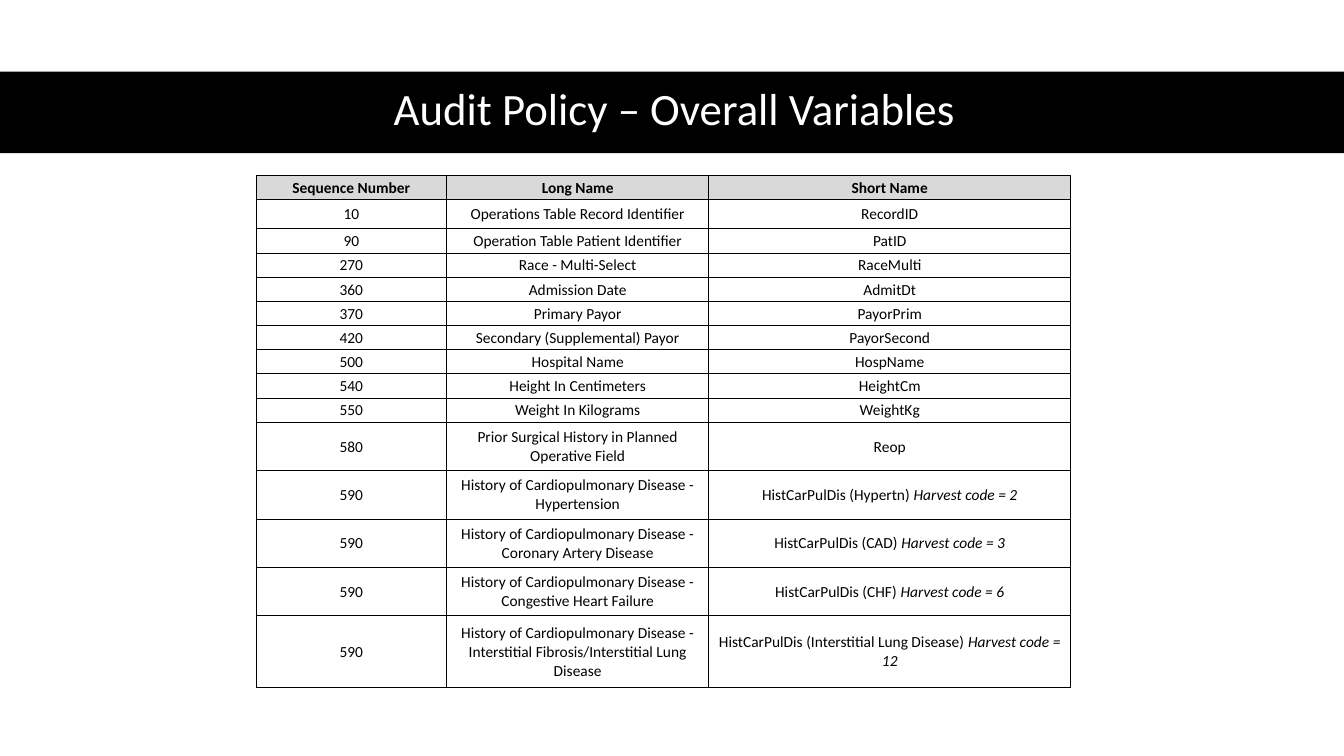
from dataclasses import dataclass

from lxml.etree import SubElement
from pptx import Presentation
from pptx.dml.color import RGBColor
from pptx.enum.shapes import MSO_SHAPE
from pptx.enum.text import MSO_ANCHOR, PP_ALIGN
from pptx.oxml.ns import qn
from pptx.util import Inches, Pt


@dataclass(frozen=True)
class Theme:
    font: str = "Calibri"
    black: str = "000000"
    white: str = "FFFFFF"
    header: str = "D9D9D9"
    title_size: int = 32
    table_size: int = 11
    border: float = 0.5


@dataclass(frozen=True)
class Variable:
    number: str
    long_name: str
    short_name: str
    harvest_code: str = ""
    height: float = 0.24


THEME = Theme()
HEADER = Variable("Sequence Number", "Long Name", "Short Name")
DISEASE = "History of Cardiopulmonary Disease - "
VARIABLES = [
    Variable("10", "Operations Table Record Identifier", "RecordID", height=0.29),
    Variable("90", "Operation Table Patient Identifier", "PatID"),
    Variable("270", "Race - Multi-Select", "RaceMulti"),
    Variable("360", "Admission Date", "AdmitDt"),
    Variable("370", "Primary Payor", "PayorPrim"),
    Variable("420", "Secondary (Supplemental) Payor", "PayorSecond"),
    Variable("500", "Hospital Name", "HospName"),
    Variable("540", "Height In Centimeters", "HeightCm"),
    Variable("550", "Weight In Kilograms", "WeightKg"),
    Variable("580", "Prior Surgical History in Planned Operative Field", "Reop", height=0.48),
    Variable("590", DISEASE + "Hypertension", "HistCarPulDis (Hypertn) ", "2", 0.48),
    Variable("590", DISEASE + "Coronary Artery Disease", "HistCarPulDis (CAD) ", "3", 0.48),
    Variable("590", DISEASE + "Congestive Heart Failure", "HistCarPulDis (CHF) ", "6", 0.48),
    Variable("590", DISEASE + "Interstitial Fibrosis/Interstitial Lung Disease",
             "HistCarPulDis (Interstitial Lung Disease) ", "12", 0.71),
]
COLUMN_WIDTHS = (1.89, 2.6, 3.59)


def add_text(p, text: str, *, size: int, color: str, bold: bool = False,
             italic: bool = False) -> None:
    p.alignment = PP_ALIGN.CENTER
    r = p.add_run()
    r.text = text
    r.font.name = THEME.font
    r.font.size = Pt(size)
    r.font.bold = bold
    r.font.italic = italic
    r.font.color.rgb = RGBColor.from_string(color)


def add_title(s, text: str) -> None:
    title = s.shapes.title
    title.left, title.top = Inches(0.61), Inches(0.7)
    title.width, title.height = Inches(12.26), Inches(0.81)
    tf = title.text_frame
    tf.word_wrap = True
    tf.vertical_anchor = MSO_ANCHOR.MIDDLE
    p = tf.paragraphs[0]
    p.line_spacing = 0.9
    add_text(p, text, size=THEME.title_size, color=THEME.white)

    # Black band behind the title
    band = s.shapes.add_shape(MSO_SHAPE.RECTANGLE, 0, Inches(0.71), Inches(13.33), Inches(0.81))
    band.shadow.inherit = False
    band.fill.solid()
    band.fill.fore_color.rgb = RGBColor.from_string(THEME.black)
    band.line.fill.background()
    title.element.addprevious(band.element)


def format_cell(cell, fill: str) -> None:
    cell.vertical_anchor = MSO_ANCHOR.MIDDLE
    cell.margin_left = cell.margin_right = cell.margin_top = Inches(0.01)
    cell.margin_bottom = 0
    # Borders come before the fill in the cell properties
    tc_pr = cell._tc.get_or_add_tcPr()
    for side in ("a:lnL", "a:lnR", "a:lnT", "a:lnB"):
        ln = SubElement(tc_pr, qn(side), w=str(Pt(THEME.border)))
        SubElement(SubElement(ln, qn("a:solidFill")), qn("a:srgbClr"), val=THEME.black)
    cell.fill.solid()
    cell.fill.fore_color.rgb = RGBColor.from_string(fill)


def add_variable_table(s, rows: list[Variable]) -> None:
    frame = s.shapes.add_table(len(rows), len(COLUMN_WIDTHS), Inches(2.54), Inches(1.74),
                               Inches(sum(COLUMN_WIDTHS)), Inches(sum(v.height for v in rows)))
    table = frame.table
    table.first_row = table.horz_banding = False
    for column, width in zip(table.columns, COLUMN_WIDTHS):
        column.width = Inches(width)
    for i, v in enumerate(rows):
        is_header = v is HEADER
        table.rows[i].height = Inches(v.height)
        for j, text in enumerate((v.number, v.long_name, v.short_name)):
            cell = table.cell(i, j)
            format_cell(cell, THEME.header if is_header else THEME.white)
            add_text(cell.text_frame.paragraphs[0], text, size=THEME.table_size,
                     color=THEME.black, bold=is_header)
        if v.harvest_code:
            add_text(cell.text_frame.paragraphs[0], f"Harvest code = {v.harvest_code}",
                     size=THEME.table_size, color=THEME.black, italic=True)


def main() -> None:
    prs = Presentation()
    prs.slide_width, prs.slide_height = Inches(13.33), Inches(7.5)
    s = prs.slides.add_slide(prs.slide_layouts[5])
    add_title(s, "Audit Policy – Overall Variables ")
    add_variable_table(s, [HEADER, *VARIABLES])
    prs.save("out.pptx")


if __name__ == "__main__":
    main()
